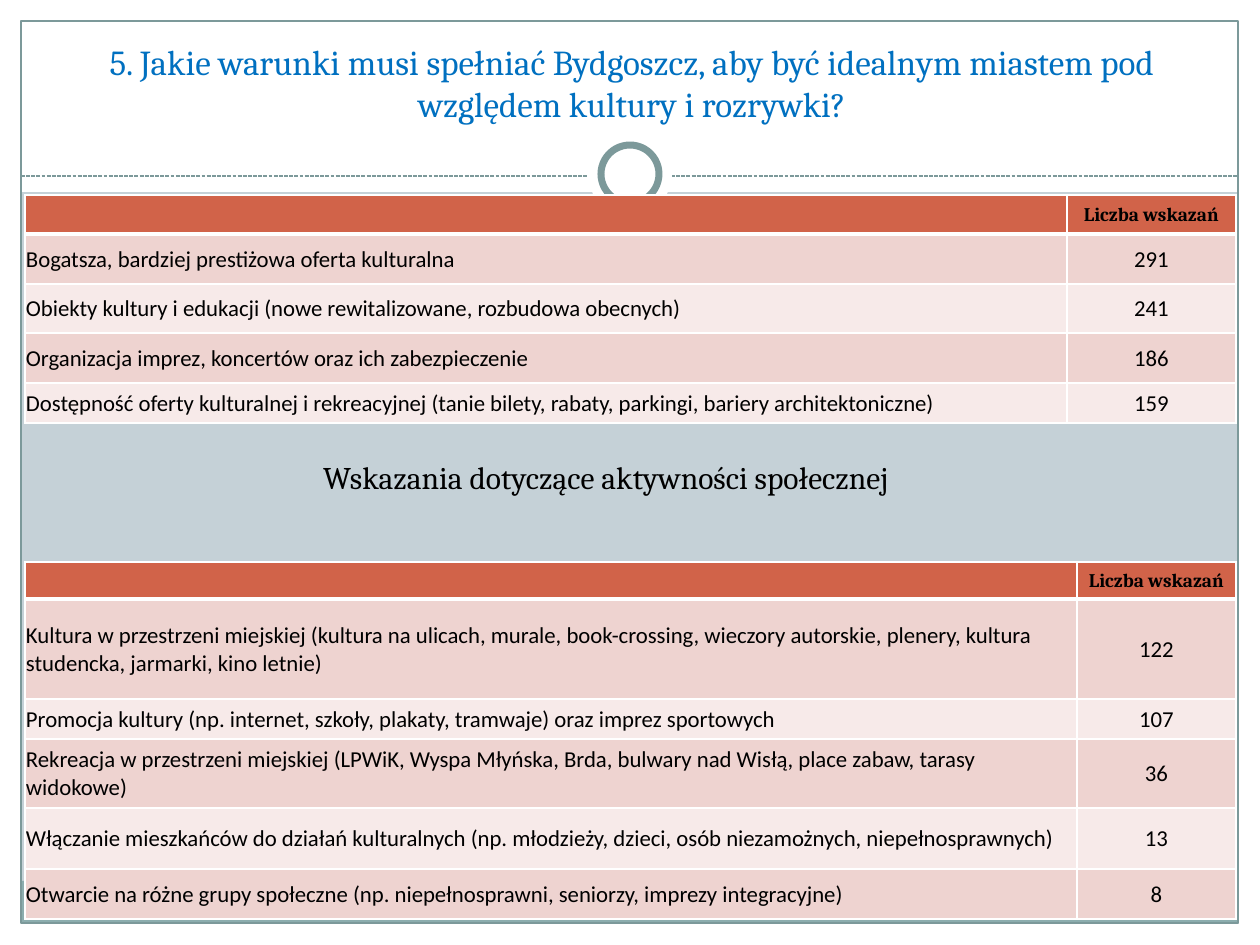
from lxml.etree import SubElement
from pptx import Presentation
from pptx.dml.color import RGBColor
from pptx.enum.dml import MSO_LINE
from pptx.enum.shapes import MSO_CONNECTOR, MSO_SHAPE
from pptx.enum.text import MSO_ANCHOR, PP_ALIGN
from pptx.oxml import parse_xml
from pptx.oxml.ns import nsdecls, qn
from pptx.util import Emu, Pt

PX = 914400 // 126
WHITE, TEAL, BLACK = "FFFFFF", "7C999A", "000000"
HEADER_FILL, BAND_FILLS = "D16349", ("EED3D0", "F7EAE9")
HEADER_FONT = {"name": "Cambria", "size": Pt(11), "bold": True}
BODY_FONT = {"name": "Calibri", "size": Pt(13), "bold": False}
MARGINS = {"margin_left": PX, "margin_right": PX, "margin_top": PX, "margin_bottom": 0}

CULTURE = [
    ("", "Liczba wskazań"),
    ("Bogatsza, bardziej prestiżowa oferta kulturalna", "291"),
    ("Obiekty kultury i edukacji (nowe rewitalizowane, rozbudowa obecnych)", "241"),
    ("Organizacja imprez, koncertów oraz ich zabezpieczenie", "186"),
    ("Dostępność oferty kulturalnej i rekreacyjnej (tanie bilety, rabaty, parkingi, "
     "bariery architektoniczne)", "159"),
]
ACTIVITY = [
    ("", "Liczba wskazań"),
    ("Kultura w przestrzeni miejskiej (kultura na ulicach, murale, book-crossing, "
     "wieczory autorskie, plenery, kultura studencka, jarmarki, kino letnie)", "122"),
    ("Promocja kultury (np. internet, szkoły, plakaty, tramwaje) oraz imprez sportowych", "107"),
    ("Rekreacja w przestrzeni miejskiej (LPWiK, Wyspa Młyńska, Brda, bulwary nad Wisłą, "
     "place zabaw, tarasy widokowe)", "36"),
    ("Włączanie mieszkańców do działań kulturalnych (np. młodzieży, dzieci, "
     "osób niezamożnych, niepełnosprawnych)", "13"),
    ("Otwarcie na różne grupy społeczne (np. niepełnosprawni, seniorzy, "
     "imprezy integracyjne)", "8"),
]


def px(*values):
    return [Emu(v * PX) for v in values]


def rgb(value):
    return RGBColor.from_string(value)


def set_all(obj, values):
    for name, value in values.items():
        setattr(obj, name, value)


def add_box(s, box, fill=None, line=None, width=0.75, kind=MSO_SHAPE.RECTANGLE):
    sp = s.shapes.add_shape(kind, *px(*box))
    sp.shadow.inherit = False
    if fill:
        sp.fill.solid()
        sp.fill.fore_color.rgb = rgb(fill)
    else:
        sp.fill.background()
    if line:
        sp.line.color.rgb = rgb(line)
        sp.line.width = Pt(width)
    else:
        sp.line.fill.background()


def add_dashed_line(s, x1, x2, y):
    line = s.shapes.add_connector(MSO_CONNECTOR.STRAIGHT, *px(x1, y, x2, y))
    line.line.color.rgb = rgb(TEAL)
    line.line.width = Pt(0.75)
    line.line.dash_style = MSO_LINE.SQUARE_DOT
    SubElement(line._element.spPr, qn("a:effectLst"))


def write(p, text, align, font, color=BLACK):
    p.alignment = align
    r = p.add_run() if text else p
    if text:
        r.text = text
    set_all(r.font, font)
    r.font.color.rgb = rgb(color)


def add_text(s, box, text, size, color, anchor):
    tf = s.shapes.add_textbox(*px(*box)).text_frame
    set_all(tf, {"word_wrap": True, "vertical_anchor": anchor})
    write(tf.paragraphs[0], text, PP_ALIGN.CENTER, {"name": "Cambria", "size": Pt(size)}, color)


def set_borders(cell, top, bottom):
    """White borders, one point wide at the sides."""
    tc_pr = cell._tc.get_or_add_tcPr()
    for i, (side, width) in enumerate(zip("LRTB", (1, 1, top, bottom))):
        tc_pr.insert(i, parse_xml(
            f'<a:ln{side} {nsdecls("a")} w="{Pt(width)}"><a:solidFill>'
            f'<a:srgbClr val="{WHITE}"/></a:solidFill></a:ln{side}>'))


def add_survey_table(s, left, top, widths, heights, rows):
    box = px(left, top, sum(widths), sum(heights))
    table = s.shapes.add_table(len(rows), len(widths), *box).table
    for col, width in zip(table.columns, px(*widths)):
        col.width = width
    for row, height in zip(table.rows, px(*heights)):
        row.height = height
    for i, texts in enumerate(rows):
        fill = BAND_FILLS[(i - 1) % 2] if i else HEADER_FILL
        for j, text in enumerate(texts):
            cell = table.cell(i, j)
            set_all(cell, MARGINS)
            cell.vertical_anchor = MSO_ANCHOR.MIDDLE
            cell.fill.solid()
            cell.fill.fore_color.rgb = rgb(fill)
            set_borders(cell, 3 if i == 1 else 1, 3 if i == 0 else 1)
            write(cell.text_frame.paragraphs[0], text,
                  PP_ALIGN.CENTER if j else PP_ALIGN.LEFT,
                  BODY_FONT if i else HEADER_FONT)


def add_frame(s):
    for box in ((0, 924, 1260, 21), (0, 0, 1260, 192), (0, 0, 21, 945), (1239, 0, 21, 945)):
        add_box(s, box, WHITE)
    add_box(s, (21, 881, 1217, 43), "8CADAE")
    add_box(s, (21, 21, 1217, 902), line=TEAL)
    add_dashed_line(s, 21, 1239, 176)
    add_box(s, (588, 132, 84, 84), WHITE, kind=MSO_SHAPE.OVAL)
    add_box(s, (601, 145, 58, 58), WHITE, TEAL, 4, MSO_SHAPE.OVAL)


def main():
    prs = Presentation()
    prs.slide_width, prs.slide_height = px(1260, 945)
    s = prs.slides.add_slide(prs.slide_layouts[6])
    s.background.fill.solid()
    s.background.fill.fore_color.rgb = rgb("C5D1D7")
    add_frame(s)
    add_text(s, (29, 36, 1206, 95),
             "5. Jakie warunki musi spełniać Bydgoszcz, aby być idealnym miastem "
             "pod względem kultury i rozrywki?", 20, "0070C0", MSO_ANCHOR.BOTTOM)
    add_survey_table(s, 25, 195, (1042, 169), (39, 50, 49, 50, 40), CULTURE)
    add_survey_table(s, 25, 562, (1052, 159), (37, 100, 40, 69, 61, 50), ACTIVITY)
    add_text(s, (35, 452, 1142, 51), "Wskazania dotyczące aktywności społecznej",
             18, BLACK, MSO_ANCHOR.TOP)
    prs.save("out.pptx")


if __name__ == "__main__":
    main()
